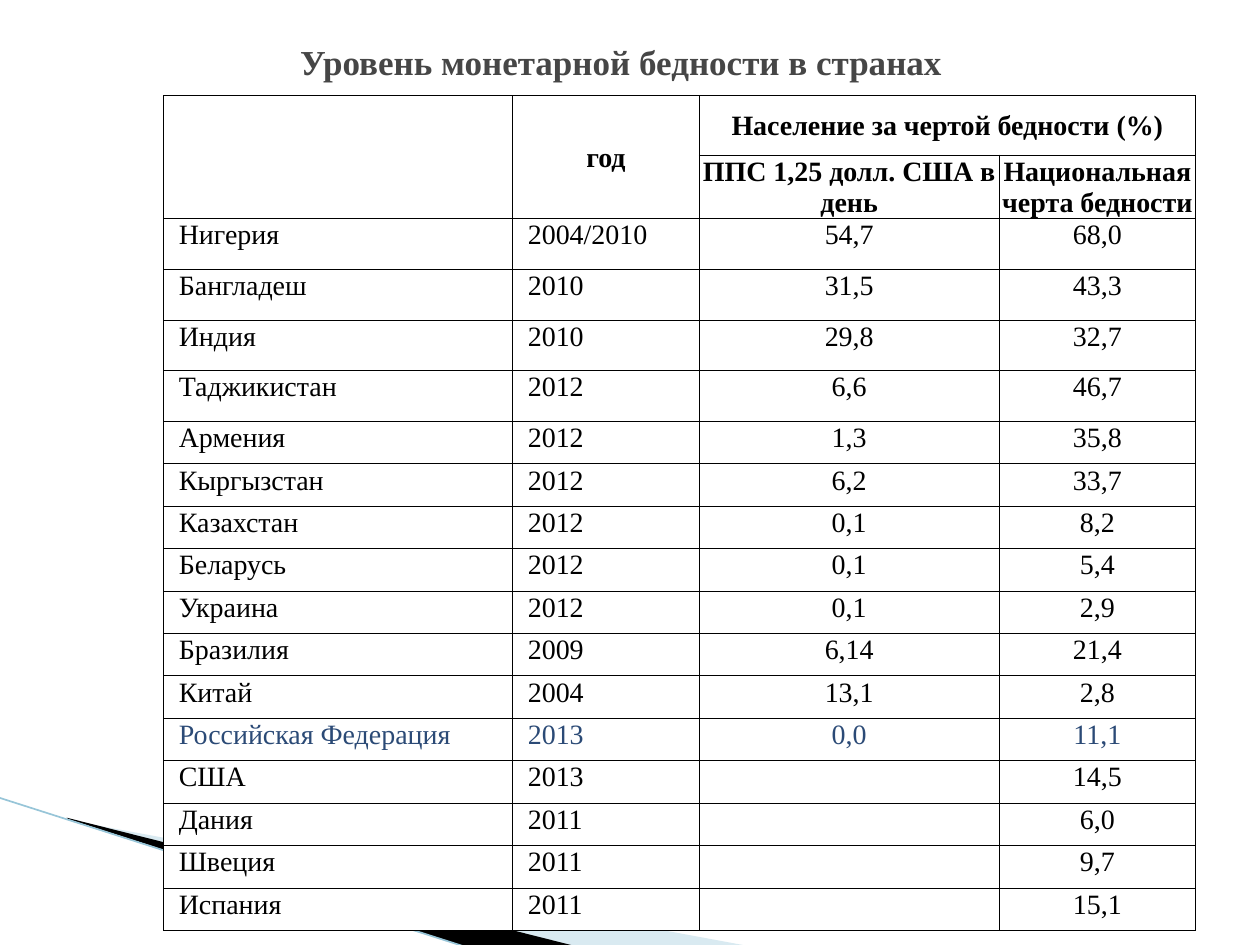
from lxml import etree
from pptx import Presentation
from pptx.dml.color import RGBColor
from pptx.enum.shapes import MSO_CONNECTOR
from pptx.enum.text import MSO_ANCHOR, PP_ALIGN
from pptx.oxml.ns import qn
from pptx.util import Inches, Pt

LEFT, CENTER = PP_ALIGN.LEFT, PP_ALIGN.CENTER
TOP, MIDDLE = MSO_ANCHOR.TOP, MSO_ANCHOR.MIDDLE
STRAIGHT = MSO_CONNECTOR.STRAIGHT
COLS, ROWS = 100, 75

HEADS = [
    ["", "год", "Население за чертой бедности (%)", ""],
    ["", "", "ППС 1,25 долл. США в день", "Национальная черта бедности"],
]
DATA = [
    ["Нигерия", "2004/2010", "54,7", "68,0"],
    ["Бангладеш", "2010", "31,5", "43,3"],
    ["Индия", "2010", "29,8", "32,7"],
    ["Таджикистан", "2012", "6,6", "46,7"],
    ["Армения", "2012", "1,3", "35,8"],
    ["Кыргызстан", "2012", "6,2", "33,7"],
    ["Казахстан", "2012", "0,1", "8,2"],
    ["Беларусь", "2012", "0,1", "5,4"],
    ["Украина", "2012", "0,1", "2,9"],
    ["Бразилия", "2009", "6,14", "21,4"],
    ["Китай", "2004", "13,1", "2,8"],
    ["Российская Федерация", "2013", "0,0", "11,1"],
    ["США", "2013", "", "14,5"],
    ["Дания", "2011", "", "6,0"],
    ["Швеция", "2011", "", "9,7"],
    ["Испания", "2011", "", "15,1"],
]
ACCENT = "Российская Федерация"
WIDTHS = [27.7, 14.8, 23.8, 15.6]
HEIGHTS = [4.7, 5] + [4.03] * 4 + [3.37] * 12


def tint(hue):
    return RGBColor.from_string(hue)


def write(frame, text, size=16, font="Times New Roman", hue="000000",
          bold=False, align=LEFT):
    para = frame.paragraphs[0]
    para.alignment = align
    run = para.add_run()
    run.text = text
    run.font.size = Pt(size)
    run.font.name = font
    run.font.bold = bold
    run.font.color.rgb = tint(hue)


class Deck:
    ink = "000000"
    paper = "FFFFFF"
    grey = "464646"
    blue = "2B4A76"

    def __init__(self):
        self.file = Presentation()
        self.file.slide_width = Inches(10)
        self.file.slide_height = Inches(7.5)
        self.slide = self.file.slides.add_slide(self.file.slide_layouts[5])

    def col(self, count):
        return round(self.file.slide_width * count / COLS)

    def row(self, count):
        return round(self.file.slide_height * count / ROWS)

    def title(self, text, left, top, width, height):
        box = self.slide.shapes.title
        box.left, box.top = self.col(left), self.row(top)
        box.width, box.height = self.col(width), self.row(height)
        frame = box.text_frame
        frame.vertical_anchor = MIDDLE
        frame.margin_right = self.col(2.4)
        write(frame, text, size=20, hue=self.grey, bold=True, align=CENTER)

    def wedge(self, points, hue, alpha=100):
        spots = [(self.col(x), self.row(y)) for x, y in points]
        form = self.slide.shapes.build_freeform(*spots[0])
        form.add_line_segments(spots[1:])
        shape = form.convert_to_shape()
        shape.shadow.inherit = False
        shape.line.fill.background()
        shape.fill.solid()
        shape.fill.fore_color.rgb = tint(hue)
        if alpha < 100:
            node = shape.fill._xPr.find(".//" + qn("a:srgbClr"))
            etree.SubElement(node, qn("a:alpha"), val=str(alpha * 1000))

    def line(self, start, end, hue, width):
        ends = [self.col(start[0]), self.row(start[1]),
                self.col(end[0]), self.row(end[1])]
        link = self.slide.shapes.add_connector(STRAIGHT, *ends)
        link.line.color.rgb = tint(hue)
        link.line.width = Pt(width)
        etree.SubElement(link._element.spPr, qn("a:effectLst"))

    def edge(self, cell):
        props = cell._tc.get_or_add_tcPr()
        for side in ("lnL", "lnR", "lnT", "lnB"):
            line = etree.SubElement(props, qn("a:" + side), w=str(Pt(0.5)))
            fill = etree.SubElement(line, qn("a:solidFill"))
            etree.SubElement(fill, qn("a:srgbClr"), val=self.ink)

    def cell(self, cell, text, head, inset, hue):
        self.edge(cell)
        cell.fill.solid()
        cell.fill.fore_color.rgb = tint(self.paper)
        cell.margin_left = self.col(1.2 if inset else 0.1)
        cell.margin_right = self.col(0.1)
        cell.margin_top = self.row(0.1)
        cell.margin_bottom = 0
        cell.vertical_anchor = MIDDLE if head else TOP
        write(cell.text_frame, text, hue=hue, bold=head,
              align=LEFT if inset else CENTER)

    def table(self, left, top, heads, data, widths, heights):
        rows = heads + data
        grid = self.slide.shapes.add_table(
            len(rows), len(widths), self.col(left), self.row(top),
            self.col(sum(widths)), self.row(sum(heights))).table
        grid.first_row = grid.horz_banding = False
        for item, width in zip(grid.columns, widths):
            item.width = self.col(width)
        for item, height in zip(grid.rows, heights):
            item.height = self.row(height)
        for r, texts in enumerate(rows):
            head = r < len(heads)
            hue = self.blue if texts[0] == ACCENT else self.ink
            for c, text in enumerate(texts):
                self.cell(grid.cell(r, c), text, head, not head and c < 2, hue)
        for start, end in [((0, 0), (1, 0)), ((0, 1), (1, 1)), ((0, 2), (0, 3))]:
            grid.cell(*start).merge(grid.cell(*end))

    def save(self):
        self.file.save("out.pptx")


def main():
    deck = Deck()
    deck.wedge([(5.5, 65.1), (59.5, 75.1), (45.6, 75.1), (5.5, 65)], "A0CBDC", 40)
    deck.wedge([(5.3, 64.9), (45.7, 75.1), (37.2, 75.2), (5.4, 65)], "000000")
    deck.line((-0.1, 63.3), (37.1, 75.2), "97C5D8", 0.95)
    deck.title("Уровень монетарной бедности в странах", 7.5, 2.1, 85, 5.5)
    deck.table(13, 7.6, HEADS, DATA, WIDTHS, HEIGHTS)
    deck.save()


if __name__ == "__main__":
    main()
